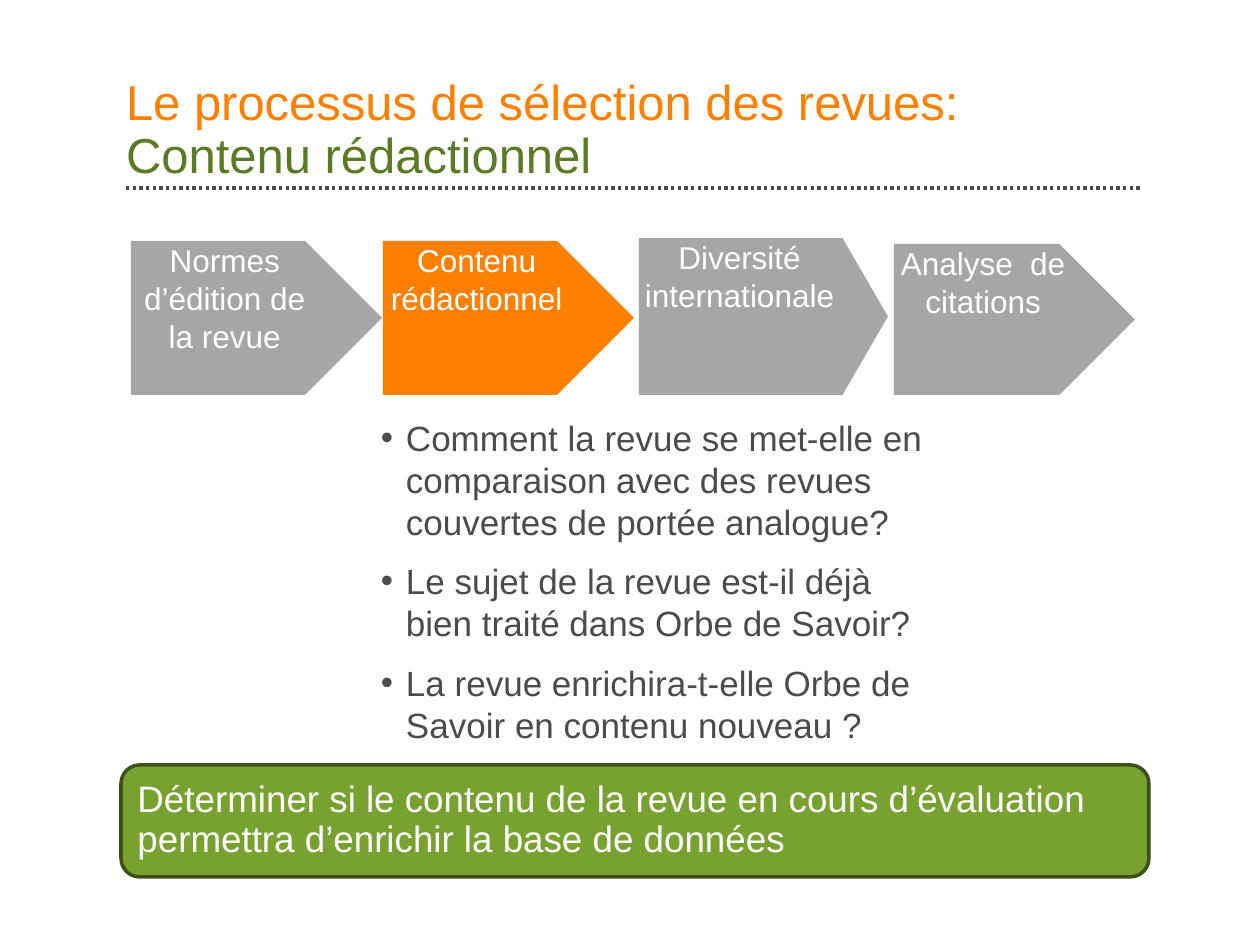
from lxml.etree import SubElement
from pptx import Presentation
from pptx.dml.color import RGBColor
from pptx.enum.dml import MSO_LINE
from pptx.enum.shapes import MSO_CONNECTOR, MSO_SHAPE
from pptx.enum.text import MSO_ANCHOR as Anchor, MSO_AUTO_SIZE, PP_ALIGN as Align
from pptx.oxml.ns import qn
from pptx.util import Emu, Pt

ORANGE = RGBColor(0xFF, 0x80, 0x00)
GREEN = RGBColor(0x78, 0xA2, 0x2F)
TITLE_GREEN = RGBColor(0x5A, 0x7A, 0x23)
DARK_GREEN = RGBColor(0x3C, 0x51, 0x17)
GRAY = RGBColor(0xA6, 0xA6, 0xA6)
DARK_GRAY = RGBColor(0x4B, 0x4B, 0x4B)
WHITE = RGBColor(0xFF, 0xFF, 0xFF)

TITLE = [("Le processus de sélection des revues:", ORANGE),
         ("Contenu rédactionnel", TITLE_GREEN)]
STEPS = [
    ("Normes d’édition de la revue", GRAY, 131, 241, 251, 0.5),
    ("Contenu rédactionnel", ORANGE, 383, 241, 251, 0.5),
    ("Diversité internationale", GRAY, 639, 238, 249, 0.29),
    ("Analyse  de citations", GRAY, 894, 244, 241, 0.5),
]
STEP_BOTTOM = 395
QUESTIONS = [
    "Comment la revue se met-elle en comparaison avec des revues couvertes de portée analogue?",
    "Le sujet de la revue est-il déjà bien traité dans Orbe de Savoir?",
    "La revue enrichira-t-elle Orbe de Savoir en contenu nouveau ?",
]
GOAL = ("Déterminer si le contenu de la revue en cours d’évaluation "
        "permettra d’enrichir la base de données")


def px(length):
    return Emu(round(length * 914400 / 126))


def place(shape, left, top, width, height):
    shape.left, shape.top = px(left), px(top)
    shape.width, shape.height = px(width), px(height)


def set_bullet(para, indent):
    properties = para._p.get_or_add_pPr()
    properties.set("marL", str(px(indent)))
    properties.set("indent", str(-px(indent)))
    SubElement(properties, qn("a:buFont"), typeface="Arial")
    SubElement(properties, qn("a:buChar"), char="•")


def write(box, paragraphs, size, align=Align.LEFT, anchor=Anchor.TOP,
          insets=(0, 0, 0, 0), line=1.0, gap=0, bullet=0):
    frame = box.text_frame
    frame.word_wrap = True
    frame.auto_size = MSO_AUTO_SIZE.NONE
    frame.vertical_anchor = anchor
    (frame.margin_left, frame.margin_top,
     frame.margin_right, frame.margin_bottom) = map(px, insets)
    for index, spans in enumerate(paragraphs):
        para = frame.paragraphs[0] if index == 0 else frame.add_paragraph()
        if bullet:
            set_bullet(para, bullet)
        para.alignment = align
        para.line_spacing = line
        para.space_before = Pt(gap if index else 0)
        for number, (text, color) in enumerate(spans):
            if number:
                para.add_line_break()
            span = para.add_run()
            span.text = text
            span.font.name = "Arial"
            span.font.size = Pt(size)
            span.font.color.rgb = color


def add_block(page, kind, area, fill, adjustment=None, border=None):
    shape = page.shapes.add_shape(kind, *map(px, area))
    shape.shadow.inherit = False
    shape.fill.solid()
    shape.fill.fore_color.rgb = fill
    if adjustment is not None:
        shape.adjustments[0] = adjustment
    if border is None:
        shape.line.fill.background()
    else:
        shape.line.color.rgb = border
        shape.line.width = Pt(2)
    return shape


def add_rule(page):
    rule = page.shapes.add_connector(
        MSO_CONNECTOR.STRAIGHT, px(126), px(188), px(1141), px(188))
    rule.line.color.rgb = DARK_GRAY
    rule.line.width = Pt(1.9)
    rule.line.dash_style = MSO_LINE.ROUND_DOT
    SubElement(rule._element.spPr, qn("a:effectLst"))


def main():
    deck = Presentation()
    deck.slide_width, deck.slide_height = px(1260), px(945)
    page = deck.slides.add_slide(deck.slide_layouts[1])

    title = page.shapes.title
    place(title, 126, 69, 1015, 115)
    write(title, [TITLE], 28, anchor=Anchor.BOTTOM, line=0.9)
    add_rule(page)

    for label, fill, left, top, width, point in STEPS:
        step = add_block(page, MSO_SHAPE.PENTAGON,
                         (left, top, width, STEP_BOTTOM - top), fill, point)
        write(step, [[(label, WHITE)]], 18, Align.CENTER, insets=(0, 0, 25, 0))

    body = page.placeholders[1]
    place(body, 368, 410, 586, 351)
    write(body, [[(question, DARK_GRAY)] for question in QUESTIONS], 20,
          insets=(13, 6, 13, 6), gap=10, bullet=25)

    goal = add_block(page, MSO_SHAPE.ROUNDED_RECTANGLE, (121, 765, 1028, 112),
                     GREEN, border=DARK_GREEN)
    write(goal, [[(GOAL, WHITE)]], 21, anchor=Anchor.MIDDLE,
          insets=(11, 11, 11, 11), line=0.9)

    deck.save("out.pptx")


if __name__ == "__main__":
    main()
